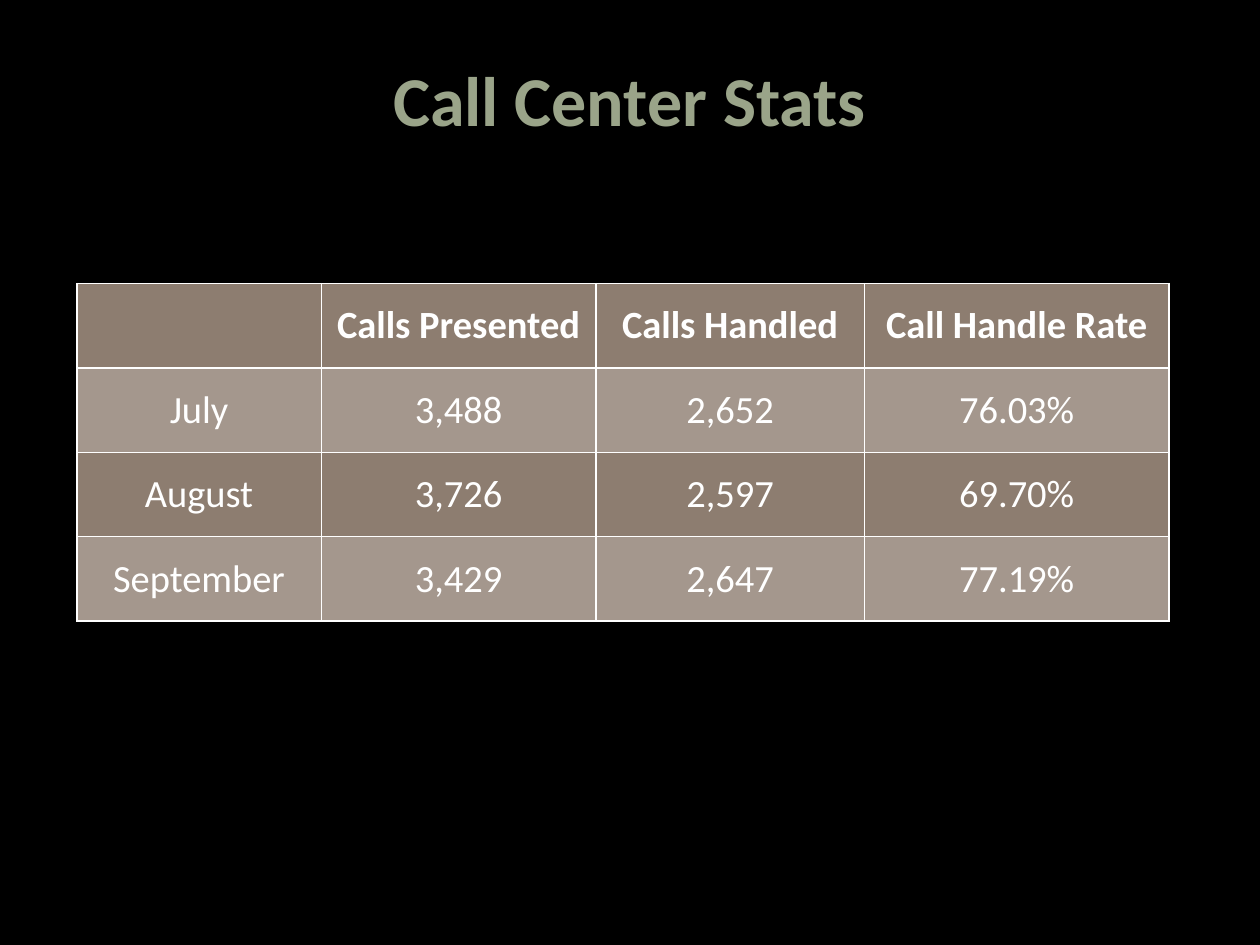
from dataclasses import dataclass

from lxml import etree
from pptx import Presentation
from pptx.dml.color import RGBColor
from pptx.enum.text import MSO_ANCHOR, PP_ALIGN
from pptx.oxml.ns import qn
from pptx.util import Inches, Pt

CENTER = PP_ALIGN.CENTER
MIDDLE = MSO_ANCHOR.MIDDLE
BLANK_LAYOUT = 6


@dataclass(frozen=True)
class Theme:
    font: str = "Calibri"
    background: str = "000000"
    title: str = "9AA489"
    text: str = "FFFFFF"
    border: str = "FFFFFF"
    band_dark: str = "8D7D70"
    band_light: str = "A4978D"
    title_size: int = 40
    table_size: int = 22
    border_width: int = 1


class SlideBuilder:
    def __init__(self, slide, theme):
        self.slide = slide
        self.theme = theme

    def background(self):
        fill = self.slide.background.fill
        fill.solid()
        fill.fore_color.rgb = RGBColor.from_string(self.theme.background)

    def set_text(self, paragraph, text, size, color, bold):
        paragraph.text = text
        paragraph.alignment = CENTER
        font = paragraph.font
        font.name = self.theme.font
        font.size = Pt(size)
        font.bold = bold
        font.color.rgb = RGBColor.from_string(color)

    def title(self, text, left, top, width, height):
        box = self.slide.shapes.add_textbox(
            Inches(left), Inches(top), Inches(width), Inches(height))
        frame = box.text_frame
        frame.word_wrap = True
        frame.vertical_anchor = MIDDLE
        self.set_text(frame.paragraphs[0], text, self.theme.title_size,
                      self.theme.title, True)

    def border(self, cell):
        properties = cell._tc.get_or_add_tcPr()
        for position, side in enumerate(("lnL", "lnR", "lnT", "lnB")):
            line = etree.Element(qn(f"a:{side}"),
                                 w=str(Pt(self.theme.border_width)))
            fill = etree.SubElement(line, qn("a:solidFill"))
            etree.SubElement(fill, qn("a:srgbClr"), val=self.theme.border)
            # Borders must come before the cell fill
            properties.insert(position, line)

    def table(self, rows, left, top, column_widths, row_height):
        table = self.slide.shapes.add_table(
            len(rows), len(column_widths), Inches(left), Inches(top),
            Inches(sum(column_widths)), Inches(row_height * len(rows))).table
        for column, width in zip(table.columns, column_widths):
            column.width = Inches(width)
        bands = (self.theme.band_dark, self.theme.band_light)
        for row_index, values in enumerate(rows):
            table.rows[row_index].height = Inches(row_height)
            for column_index, value in enumerate(values):
                cell = table.cell(row_index, column_index)
                cell.vertical_anchor = MIDDLE
                cell.fill.solid()
                cell.fill.fore_color.rgb = RGBColor.from_string(
                    bands[row_index % 2])
                self.border(cell)
                self.set_text(cell.text_frame.paragraphs[0], value,
                              self.theme.table_size, self.theme.text,
                              row_index == 0)


CALL_STATS = (
    ("", "Calls Presented", "Calls Handled", "Call Handle Rate"),
    ("July", "3,488", "2,652", "76.03%"),
    ("August", "3,726", "2,597", "69.70%"),
    ("September", "3,429", "2,647", "77.19%"),
)


def main():
    presentation = Presentation()
    presentation.slide_width = Inches(10)
    presentation.slide_height = Inches(7.5)
    slide = presentation.slides.add_slide(
        presentation.slide_layouts[BLANK_LAYOUT])
    builder = SlideBuilder(slide, Theme())

    # Background and heading
    builder.background()
    builder.title("Call Center Stats", 0.75, 0.25, 8.49, 1.06)

    # Monthly call figures
    builder.table(CALL_STATS, 0.61, 2.25, (1.94, 2.18, 2.13, 2.42), 0.67)

    presentation.save("out.pptx")


if __name__ == "__main__":
    main()
